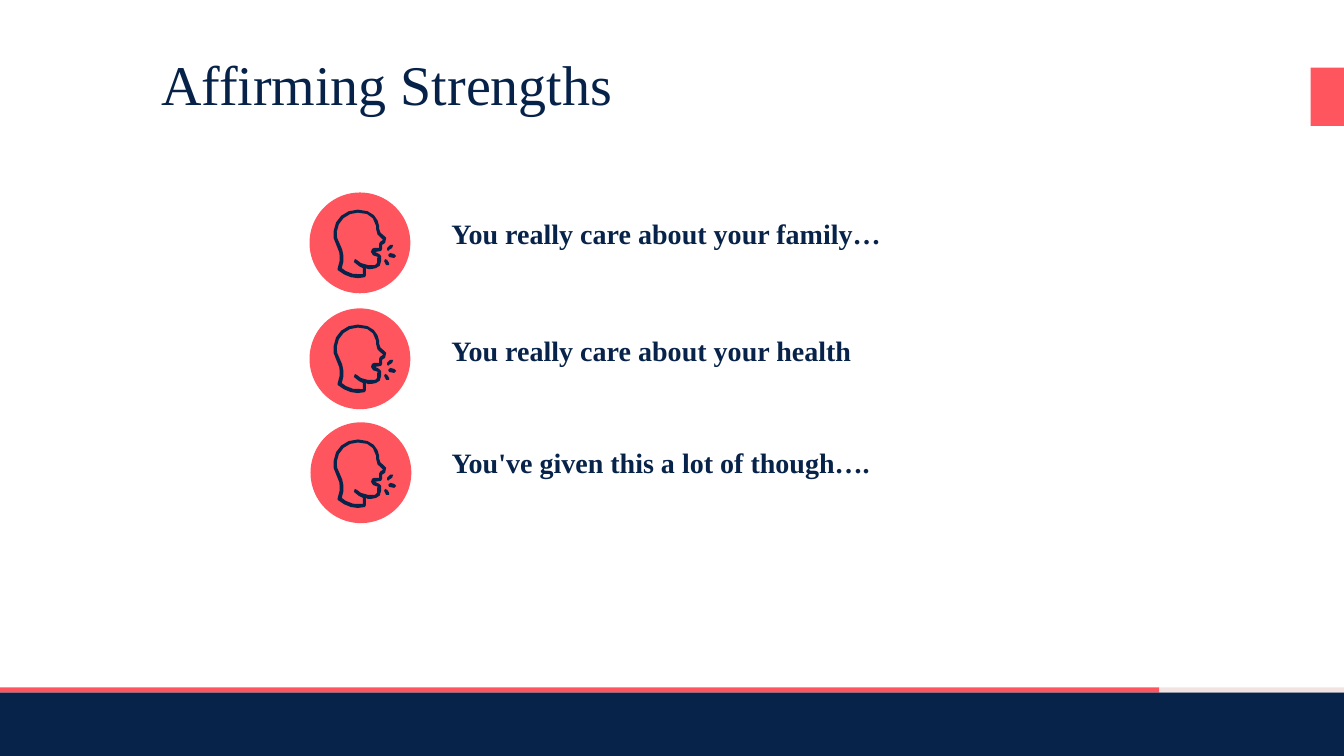
from math import ceil, dist

from pptx import Presentation
from pptx.dml.color import RGBColor
from pptx.enum.shapes import MSO_SHAPE as Shape
from pptx.enum.text import MSO_ANCHOR as Anchor
from pptx.util import Emu, Pt

PX = 9144  # 100 px to the inch
NAVY = RGBColor(0x08, 0x23, 0x49)
TITLE_NAVY = RGBColor(0x07, 0x22, 0x48)
CORAL = RGBColor(0xFF, 0x55, 0x5E)
BLUSH = RGBColor(0xF3, 0xE2, 0xE2)
FONT = "Times New Roman"

TITLE = "Affirming Strengths"
BARS = [
    ((0, 687, 1333, 63), NAVY),
    ((0, 682, 1150, 5), CORAL),
    ((1150, 682, 183, 5), BLUSH),
    ((1300, 67, 33, 58), CORAL),
]
# text, text box (left, top, width, height), circle (left, top)
STRENGTHS = [
    ("You really care about your family…", (438, 210, 573, 44), (307, 191)),
    ("You really care about your health", (438, 326, 680, 44), (307, 306)),
    ("You've given this a lot of though….", (438, 437, 562, 44), (308, 419)),
]
CIRCLE = 100
HEAD_LEFT, HEAD_TOP, HEAD_STEP = 300, 200, 114
CURVE_STEP = 8

# Each outline is a start point, then lines (x, y) and cubic curves (six numbers).
SOUND_MARKS = [
    [(91, 56), (92, 56, 93, 55, 93, 54), (93, 53, 92, 52, 91, 52), (87, 51),
     (86, 51, 85, 52, 85, 53), (85, 54, 85, 55, 86, 55)],
    [(83, 63), (84, 64, 85, 64, 86, 63), (86, 63, 87, 62, 86, 61), (84, 58),
     (84, 57, 83, 56, 82, 57), (81, 58, 81, 59, 81, 59)],
    [(85, 49), (86, 49, 86, 49, 86, 48), (89, 46), (90, 45, 90, 44, 90, 43),
     (89, 43, 88, 42, 87, 43), (84, 46), (83, 46, 83, 47, 84, 48)],
]
HEAD_OUTER = [
    (83, 36), (82, 35, 82, 34, 81, 34), (78, 32, 76, 30, 76, 27),
    (76, 26, 76, 25, 76, 24), (75, 17, 70, 8, 55, 8), (42, 8, 32, 17, 31, 29),
    (30, 34, 31, 39, 34, 44), (38, 50, 38, 59, 35, 66), (35, 68),
    (41, 73, 48, 76, 55, 76), (57, 76, 60, 76, 62, 75), (63, 75, 63, 74, 63, 73),
    (63, 66), (65, 67), (67, 67, 70, 67, 73, 66),
    (76, 66, 78, 62, 78, 59), (78, 54),
    (77, 53, 77, 52, 76, 52), (74, 52, 72, 51, 72, 50), (74, 50, 76, 49, 78, 49),
    (79, 48, 79, 48, 79, 47), (79, 43), (80, 42, 82, 42, 82, 41),
    (84, 39, 84, 37, 83, 36),
]
HEAD_INNER = [
    (80, 38), (79, 39, 78, 40, 77, 40), (76, 40, 76, 41, 76, 42), (76, 46),
    (74, 46, 73, 46, 71, 46), (70, 46, 69, 47, 69, 47), (68, 48, 68, 49, 68, 50),
    (69, 52, 70, 55, 75, 55), (74, 56), (74, 59),
    (75, 60, 75, 61, 74, 61), (74, 62, 73, 63, 72, 63), (70, 63, 67, 63, 65, 63),
    (62, 63, 60, 62, 58, 61), (56, 60, 55, 59, 54, 58), (54, 57, 53, 57, 52, 57),
    (51, 58, 51, 59, 51, 60), (52, 62, 54, 63, 56, 64), (57, 65, 58, 65, 60, 66),
    (60, 72), (49, 74, 41, 68, 39, 66), (42, 58, 41, 49, 37, 42),
    (34, 38, 34, 34, 34, 30), (35, 19, 44, 11, 55, 11), (66, 11, 71, 15, 73, 24),
    (73, 27), (73, 31, 75, 35, 79, 37),
]
TALKING_HEAD = [[mark] for mark in SOUND_MARKS] + [[HEAD_OUTER, HEAD_INNER]]


def emu(*lengths):
    return [Emu(round(n * PX)) for n in lengths]


def paint(sp, color):
    sp.shadow.inherit = False
    sp.fill.solid()
    sp.fill.fore_color.rgb = color
    sp.line.fill.background()


def add_preset(shapes, kind, box, color):
    paint(shapes.add_shape(kind, *emu(*box)), color)


def add_text(shapes, text, box, anchor=Anchor.TOP, color=NAVY, **font):
    tf = shapes.add_textbox(*emu(*box)).text_frame
    tf.word_wrap = True
    tf.vertical_anchor = anchor
    r = tf.paragraphs[0].add_run()
    r.text = text
    r.font.color.rgb = color
    for name, value in {"name": FONT, **font}.items():
        setattr(r.font, name, value)


def flatten(outline):
    """Turn an outline's curves into straight steps, more for longer curves."""
    points = [outline[0]]
    for seg in outline[1:]:
        start = points[-1]
        if len(seg) == 2:
            points.append(seg)
            continue
        steps = ceil(dist(start, seg[4:]) / CURVE_STEP)
        for i in range(1, steps + 1):
            t = i / steps
            u = 1 - t
            points.append(tuple(
                u**3 * start[k] + 3 * u * u * t * seg[k]
                + 3 * u * t * t * seg[k + 2] + t**3 * seg[k + 4]
                for k in (0, 1)))
    return points


def add_outlines(shapes, outlines, left, top, color):
    """Draw outlines as one shape; a second outline cuts a hole."""
    builder = None
    for outline in outlines:
        first, *rest = [emu(left + x, top + y) for x, y in flatten(outline)]
        if builder is None:
            builder = shapes.build_freeform(*first, scale=1.0)
        else:
            builder.move_to(*first)
        builder.add_line_segments(rest, close=True)
    paint(builder.convert_to_shape(), color)


def main():
    prs = Presentation()
    prs.slide_width, prs.slide_height = emu(1333, 750)
    s = prs.slides.add_slide(prs.slide_layouts[6])

    for box, color in BARS:
        add_preset(s.shapes, Shape.RECTANGLE, box, color)

    for row, (text, text_box, corner) in enumerate(STRENGTHS):
        add_text(s.shapes, text, text_box, size=Pt(20), bold=True)
        icon = s.shapes.add_group_shape().shapes
        add_preset(icon, Shape.OVAL, (*corner, CIRCLE, CIRCLE), CORAL)
        for outlines in TALKING_HEAD:
            add_outlines(icon, outlines, HEAD_LEFT, HEAD_TOP + row * HEAD_STEP, NAVY)

    add_text(s.shapes, TITLE, (150, 44, 1090, 77), Anchor.BOTTOM, TITLE_NAVY, size=Pt(40))
    prs.save("out.pptx")


if __name__ == "__main__":
    main()
